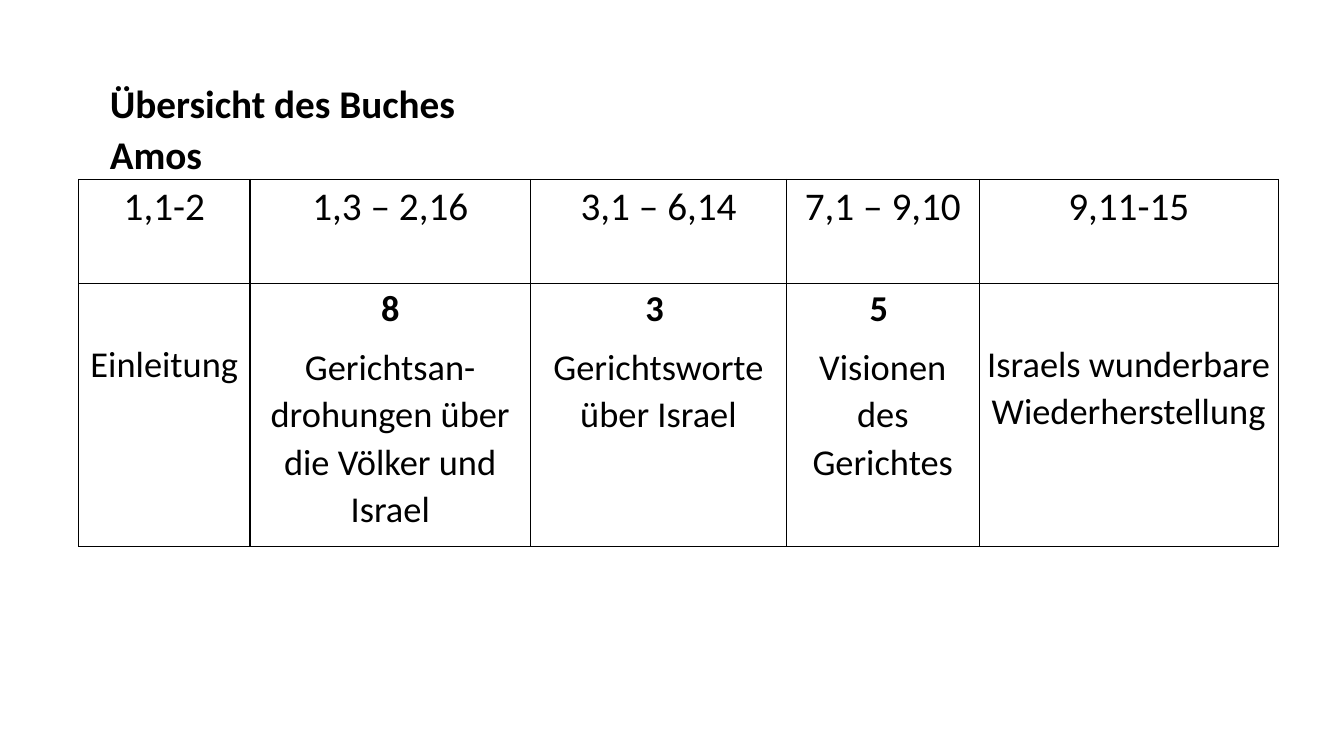
from lxml.etree import SubElement
from pptx import Presentation
from pptx.dml.color import RGBColor
from pptx.enum.text import MSO_ANCHOR, MSO_AUTO_SIZE, PP_ALIGN
from pptx.oxml.ns import qn
from pptx.util import Pt

COLORS = {"ink": "000000", "paper": "FFFFFF"}
FONT = "Calibri"
LINE_SPACING = 1.07

COLUMN_WIDTHS = [122.4, 200.4, 182.9, 137.5, 213.9]
ROW_HEIGHTS = [74.2, 188]
LOWERED_TOP = 40  # aligns sections without a number with the numbered ones

# Verses, number of parts, content
SECTIONS = [
    ("1,1-2", "", "Einleitung"),
    ("1,3 – 2,16", "8", "Gerichtsan-drohungen über die Völker und Israel"),
    ("3,1 – 6,14", "3 ", "Gerichtsworte über Israel"),
    ("7,1 – 9,10", "5 ", "Visionen des Gerichtes"),
    ("9,11-15", "", "Israels wunderbare Wiederherstellung"),
]


def add_run(p, text, size, bold=False):
    r = p.add_run()
    r.text = text
    r.font.name = FONT
    r.font.size = Pt(size)
    r.font.bold = bold
    r.font.color.rgb = RGBColor.from_string(COLORS["ink"])


def add_heading(s, left, top, width, height):
    title = s.shapes.title
    title.left, title.top = Pt(left), Pt(top)
    title.width, title.height = Pt(width), Pt(height)
    tf = title.text_frame
    tf.word_wrap = True
    tf.auto_size = MSO_AUTO_SIZE.SHAPE_TO_FIT_TEXT
    tf.vertical_anchor = MSO_ANCHOR.TOP
    p = tf.paragraphs[0]
    p.alignment = PP_ALIGN.LEFT
    p.line_spacing = LINE_SPACING
    p.space_before = Pt(12)
    add_run(p, "Übersicht des Buches Amos", 28, bold=True)


def set_borders(cell):
    tc_pr = cell._tc.get_or_add_tcPr()
    for i, side in enumerate(("lnL", "lnR", "lnT", "lnB")):
        ln = SubElement(tc_pr, qn(f"a:{side}"), w=str(Pt(1)))
        fill = SubElement(ln, qn("a:solidFill"))
        SubElement(fill, qn("a:srgbClr"), val=COLORS["ink"])
        tc_pr.insert(i, ln)  # borders come before the fill


def fill_cell(cell, lines, size, top=0):
    """Write (text, bold) lines as centred paragraphs."""
    cell.fill.solid()
    cell.fill.fore_color.rgb = RGBColor.from_string(COLORS["paper"])
    set_borders(cell)
    cell.margin_left = cell.margin_right = Pt(5)
    cell.margin_top, cell.margin_bottom = Pt(top), Pt(0)
    tf = cell.text_frame
    for i, (text, bold) in enumerate(lines):
        p = tf.add_paragraph() if i else tf.paragraphs[0]
        p.alignment = PP_ALIGN.CENTER
        p.line_spacing = LINE_SPACING
        p.space_after = Pt(8)
        add_run(p, text, size, bold)


def add_overview(s, left, top):
    frame = s.shapes.add_table(
        len(ROW_HEIGHTS), len(SECTIONS), Pt(left), Pt(top),
        Pt(sum(COLUMN_WIDTHS)), Pt(sum(ROW_HEIGHTS)))
    table = frame.table
    table.first_row = table.horz_banding = False
    for row, height in zip(table.rows, ROW_HEIGHTS):
        row.height = Pt(height)
    for col, (verses, number, content) in enumerate(SECTIONS):
        table.columns[col].width = Pt(COLUMN_WIDTHS[col])
        fill_cell(table.cell(0, col), [(verses, False)], 28)
        lines = [(number, True)] if number else []
        fill_cell(table.cell(1, col), lines + [(content, False)], 26,
                  top=0 if number else LOWERED_TOP)


def main():
    prs = Presentation()
    prs.slide_width, prs.slide_height = Pt(960), Pt(540)
    s = prs.slides.add_slide(prs.slide_layouts[5])
    s.background.fill.solid()
    s.background.fill.fore_color.rgb = RGBColor.from_string(COLORS["paper"])
    add_heading(s, 71.3, 51, 322.6, 41.8)
    add_overview(s, 56.2, 128.2)
    prs.save("out.pptx")


if __name__ == "__main__":
    main()
